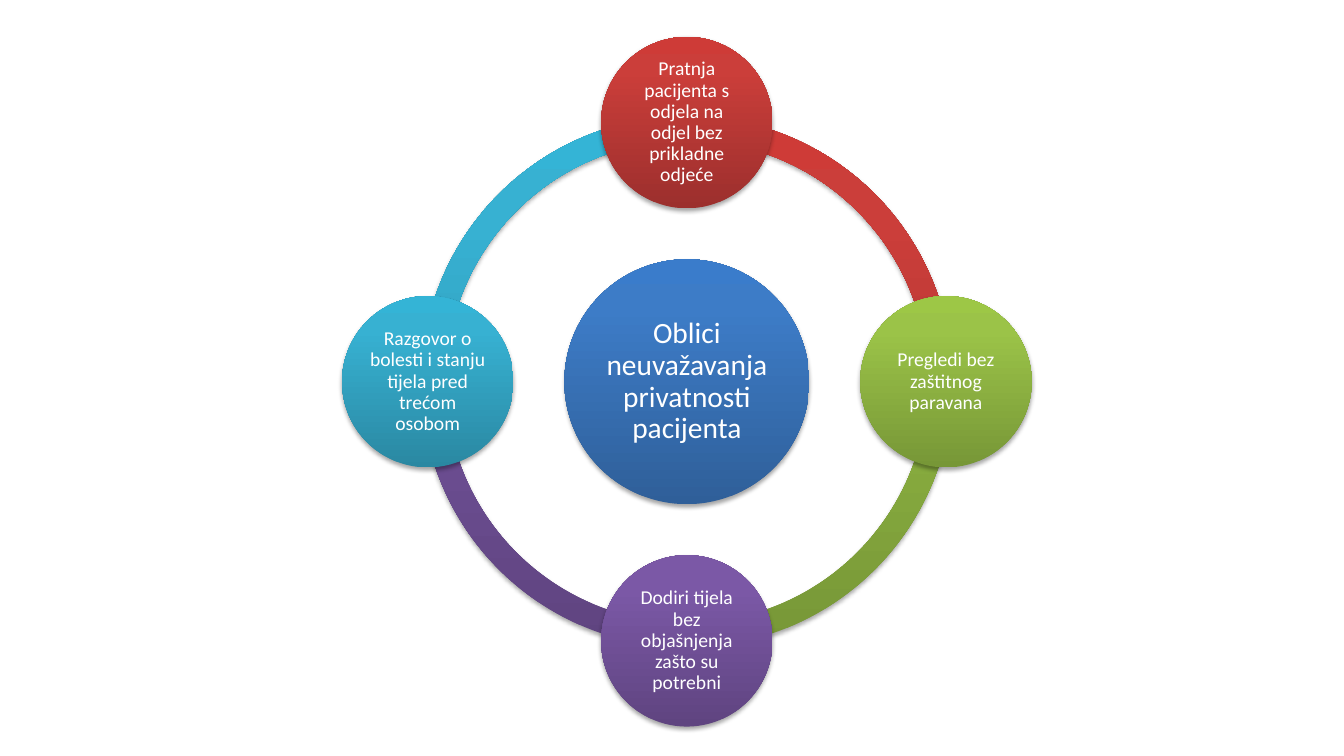
"""Build a radial cycle slide: one core circle, four satellites and the ring that joins them."""
from copy import deepcopy
from math import cos, radians, sin

from lxml import etree
from pptx import Presentation
from pptx.dml.color import RGBColor
from pptx.enum.shapes import MSO_SHAPE
from pptx.enum.text import MSO_ANCHOR, PP_ALIGN
from pptx.oxml import parse_xml
from pptx.oxml.ns import nsdecls, qn
from pptx.util import Cm, Pt

OVAL, ARC = MSO_SHAPE.OVAL, MSO_SHAPE.BLOCK_ARC
MIDDLE, CENTER = MSO_ANCHOR.MIDDLE, PP_ALIGN.CENTER

WHITE = RGBColor(0xFF, 0xFF, 0xFF)
BLUE = [RGBColor(0x2F, 0x5F, 0x99), RGBColor(0x3D, 0x7C, 0xC7), RGBColor(0x3A, 0x7C, 0xCB)]
RED = [RGBColor(0x9C, 0x2F, 0x2D), RGBColor(0xCB, 0x3E, 0x3A), RGBColor(0xCE, 0x3B, 0x37)]
GREEN = [RGBColor(0x77, 0x97, 0x37), RGBColor(0x9B, 0xC3, 0x48), RGBColor(0x9D, 0xC7, 0x46)]
PURPLE = [RGBColor(0x5F, 0x44, 0x80), RGBColor(0x7B, 0x58, 0xA6), RGBColor(0x7C, 0x57, 0xA8)]
CYAN = [RGBColor(0x2A, 0x88, 0xA2), RGBColor(0x37, 0xB1, 0xD2), RGBColor(0x34, 0xB4, 0xD6)]
STOPS = [0, 0.8, 1]

CORE = "Oblici neuvažavanja privatnosti pacijenta"
SATELLITES = [
    ("Pratnja pacijenta s odjela na odjel bez prikladne odjeće", RED),
    ("Pregledi bez zaštitnog paravana", GREEN),
    ("Dodiri tijela bez objašnjenja zašto su potrebni", PURPLE),
    ("Razgovor o bolesti i stanju tijela pred trećom osobom", CYAN),
]

CENTER_X, CENTER_Y = 17.31, 9.62
RING_SIZE, RING_THICKNESS = 13.39, 0.046
ORBIT, CORE_SIZE, SATELLITE_SIZE = 6.53, 6.17, 4.32
STEP = 360 / len(SATELLITES)
ADJUSTMENT_PER_DEGREE = 0.6


def add_round(page, kind, x, y, size, colors):
    """Add a shaded shape centred on x, y."""
    shape = page.shapes.add_shape(kind, Cm(x - size / 2), Cm(y - size / 2), Cm(size), Cm(size))
    shape.fill.gradient()
    stop_list = shape._element.spPr.find(qn("a:gradFill")).find(qn("a:gsLst"))
    stop_list.append(deepcopy(stop_list[-1]))
    for stop, position, color in zip(shape.fill.gradient_stops, STOPS, colors):
        stop.position = position
        stop.color.rgb = color
    shape.fill.gradient_angle = 90
    shape.line.fill.background()
    shape.shadow.inherit = False
    shadow = parse_xml(
        f'<a:outerShdw {nsdecls("a")} blurRad="40000" dist="23000" dir="5400000" rotWithShape="0"/>')
    color = etree.SubElement(shadow, qn("a:srgbClr"), val="000000")
    etree.SubElement(color, qn("a:alpha"), val="35000")
    shape._element.spPr.find(qn("a:effectLst")).append(shadow)
    return shape


def write_text(shape, text, size, inset):
    """Write centred white text inside a shape."""
    frame = shape.text_frame
    frame.word_wrap = True
    frame.vertical_anchor = MIDDLE
    frame.margin_left = frame.margin_right = frame.margin_top = frame.margin_bottom = Cm(inset)
    para = frame.paragraphs[0]
    para.alignment = CENTER
    para.line_spacing = 0.9
    span = para.add_run()
    span.text = text
    span.font.name = "Calibri"
    span.font.size = Pt(size)
    span.font.color.rgb = WHITE


def main():
    """Draw the ring, the core and the satellites."""
    deck = Presentation()
    deck.slide_width, deck.slide_height = Cm(33.87), Cm(19.05)
    page = deck.slides.add_slide(deck.slide_layouts[6])

    angles = [(270 + STEP * index) % 360 for index in range(len(SATELLITES))]
    for angle, (_, colors) in reversed(list(zip(angles, SATELLITES))):
        arc = add_round(page, ARC, CENTER_X, CENTER_Y, RING_SIZE, colors)
        arc.adjustments[0] = angle * ADJUSTMENT_PER_DEGREE
        arc.adjustments[1] = (angle + STEP) % 360 * ADJUSTMENT_PER_DEGREE
        arc.adjustments[2] = RING_THICKNESS

    core = add_round(page, OVAL, CENTER_X, CENTER_Y, CORE_SIZE, BLUE)
    write_text(core, CORE, size=21, inset=0.07)

    for angle, (text, colors) in zip(angles, SATELLITES):
        x = CENTER_X + ORBIT * cos(radians(angle))
        y = CENTER_Y + ORBIT * sin(radians(angle))
        satellite = add_round(page, OVAL, x, y, SATELLITE_SIZE, colors)
        write_text(satellite, text, size=14, inset=0.05)

    deck.save("out.pptx")


if __name__ == "__main__":
    main()
